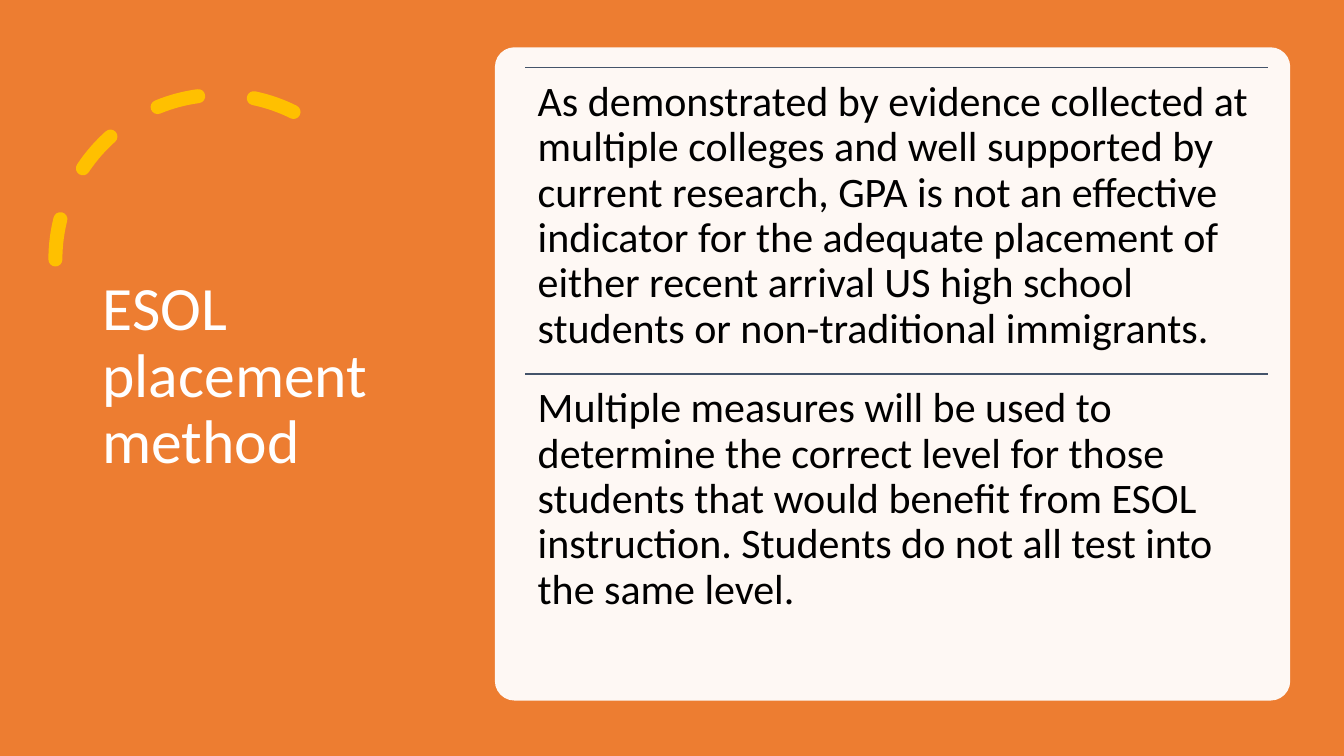
from lxml import etree
from pptx import Presentation
from pptx.dml.color import RGBColor
from pptx.enum.dml import MSO_LINE
from pptx.enum.shapes import MSO_CONNECTOR, MSO_SHAPE
from pptx.enum.text import MSO_ANCHOR
from pptx.oxml.ns import qn
from pptx.util import Pt

RECT, ROUND, ARC = MSO_SHAPE.RECTANGLE, MSO_SHAPE.ROUNDED_RECTANGLE, MSO_SHAPE.ARC
STRAIGHT, DASH = MSO_CONNECTOR.STRAIGHT, MSO_LINE.DASH
TOP, MIDDLE = MSO_ANCHOR.TOP, MSO_ANCHOR.MIDDLE

COLORS = {"back": "ED7D31", "arc": "FFC000", "card": "FFFFFF",
          "rule": "44546A", "title": "FFFFFF", "body": "000000"}
TITLE = "ESOL placement method"
POINTS = [
    "As demonstrated by evidence collected at multiple colleges and well "
    "supported by current research, GPA is not an effective indicator for the "
    "adequate placement of either recent arrival US high school students or "
    "non-traditional immigrants.",
    "Multiple measures will be used to determine the correct level for those "
    "students that would benefit from ESOL instruction. Students do not all "
    "test into the same level.",
]
LEFT, FIRST, WIDTH, STEP = 375.1, 48.2, 530.6, 218.9


def color(name):
    return RGBColor.from_string(COLORS[name])


def assign(item, values):
    for name, value in values.items():
        setattr(item, name, value)


def add_panel(slide, kind, box, fill, alpha=100):
    """Add a filled shape without outline; alpha is opacity in percent."""
    panel = slide.shapes.add_shape(kind, *map(Pt, box))
    panel.shadow.inherit = False
    panel.line.fill.background()
    panel.fill.solid()
    panel.fill.fore_color.rgb = color(fill)
    if alpha < 100:
        tint = panel._element.spPr.find(f"{qn('a:solidFill')}/{qn('a:srgbClr')}")
        etree.SubElement(tint, qn("a:alpha"), val=str(alpha * 1000))
    return panel


def add_arc(slide, box, start, end):
    """Add a dashed, mirrored arc with round caps; angles in degrees."""
    arc = slide.shapes.add_shape(ARC, *map(Pt, box))
    arc.shadow.inherit = False
    arc.fill.background()
    for index, angle in enumerate((start, end)):
        arc.adjustments[index] = angle * 0.6
    assign(arc.line, {"width": Pt(10), "dash_style": DASH})
    arc.line.color.rgb = color("arc")
    arc.line._ln.set("cap", "rnd")
    arc._element.spPr.find(qn("a:xfrm")).set("flipH", "1")


def add_rule(slide, left, top, width):
    ends = map(Pt, (left, top, left + width, top))
    rule = slide.shapes.add_connector(STRAIGHT, *ends)
    rule.line.width = Pt(1)
    rule.line.color.rgb = color("rule")
    etree.SubElement(rule._element.spPr, qn("a:effectLst"))


def add_text(slide, box, text, size, fill, anchor, pad, after=0):
    frame = slide.shapes.add_textbox(*map(Pt, box)).text_frame
    side, edge = map(Pt, pad)
    assign(frame, {"word_wrap": True, "vertical_anchor": anchor,
                   "margin_left": side, "margin_right": side,
                   "margin_top": edge, "margin_bottom": edge})
    para = frame.paragraphs[0]
    assign(para, {"line_spacing": 0.9, "space_after": Pt(after)})
    run = para.add_run()
    run.text = text
    assign(run.font, {"name": "Calibri", "size": Pt(size)})
    run.font.color.rgb = color(fill)


def main():
    deck = Presentation()
    assign(deck, {"slide_width": Pt(960), "slide_height": Pt(540)})
    slide = deck.slides.add_slide(deck.slide_layouts[6])

    add_panel(slide, RECT, (0, 0, 960, 540), "back")
    add_arc(slide, (39.6, 67.7, 235.4, 235.4), 243.55, 0)
    add_text(slide, (66.2, 50.4, 232.6, 438.5), TITLE, 44, "title", MIDDLE, (7.2, 3.6))
    card = add_panel(slide, ROUND, (353.5, 33.8, 568.1, 466.6), "card", 95)
    card.adjustments[0] = 0.03

    for index, point in enumerate(POINTS):
        top = FIRST + index * STEP
        add_rule(slide, LEFT, top, WIDTH)
        add_text(slide, (LEFT, top, WIDTH, STEP), point, 30, "body", TOP, (9, 9), 10.5)

    deck.save("out.pptx")


if __name__ == "__main__":
    main()
